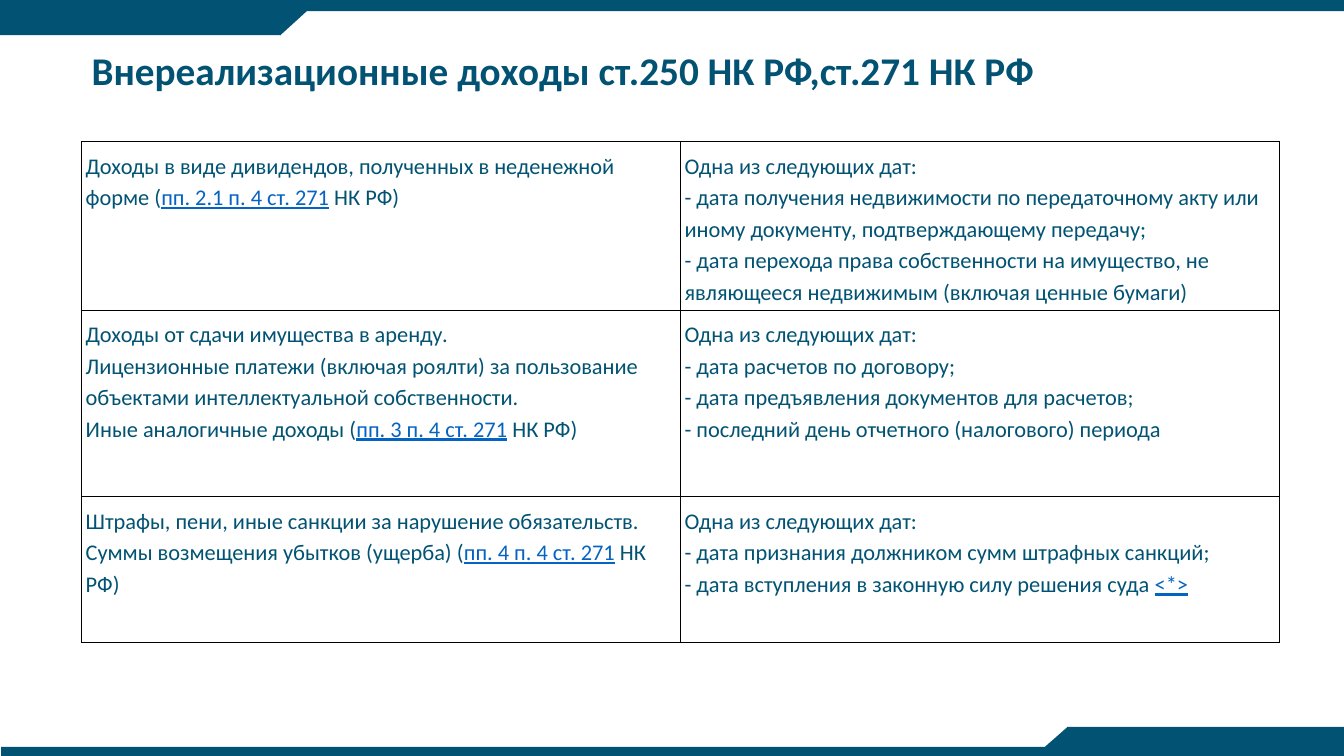
import pptx
import pptx.dml.color
import pptx.enum.shapes
import pptx.enum.text
import pptx.oxml
import pptx.oxml.ns
import pptx.util

TEAL = pptx.dml.color.RGBColor(0x02, 0x53, 0x73)
LINK_BLUE = pptx.dml.color.RGBColor(0x05, 0x63, 0xC1)
BORDER = pptx.dml.color.RGBColor(0, 0, 0)
SHAPES = pptx.enum.shapes.MSO_SHAPE
MIDDLE = pptx.enum.text.MSO_ANCHOR.MIDDLE

# Each cell is a list of paragraphs; text between bars is shown as a link.
DATES = "Одна из следующих дат:"
INCOME_ROWS = [
    (["Доходы в виде дивидендов, полученных в неденежной форме (|пп. 2.1 п. 4 ст. 271| НК РФ)"],
     [DATES,
      "- дата получения недвижимости по передаточному акту или иному документу, "
      "подтверждающему передачу;",
      "- дата перехода права собственности на имущество, не являющееся недвижимым "
      "(включая ценные бумаги)"]),
    (["Доходы от сдачи имущества в аренду.",
      "Лицензионные платежи (включая роялти) за пользование объектами "
      "интеллектуальной собственности.",
      "Иные аналогичные доходы (|пп. 3 п. 4 ст. 271| НК РФ)"],
     [DATES,
      "- дата расчетов по договору;",
      "- дата предъявления документов для расчетов;",
      "- последний день отчетного (налогового) периода"]),
    (["Штрафы, пени, иные санкции за нарушение обязательств.",
      "Суммы возмещения убытков (ущерба) (|пп. 4 п. 4 ст. 271| НК РФ)"],
     [DATES,
      "- дата признания должником сумм штрафных санкций;",
      "- дата вступления в законную силу решения суда |<*>|"]),
]


class SlidePainter:
    """Draws on one page; all lengths are percentages of the page's size."""

    font_name = "Calibri"

    def __init__(self, deck):
        self.deck = deck
        self.page = deck.slides.add_slide(deck.slide_layouts[6])

    def across(self, share):
        return int(self.deck.slide_width * share / 100)

    def down(self, share):
        return int(self.deck.slide_height * share / 100)

    def area(self, left, top, width, height):
        return self.across(left), self.down(top), self.across(width), self.down(height)

    def block(self, kind, left, top, width, height, rotation=0):
        shape = self.page.shapes.add_shape(kind, *self.area(left, top, width, height))
        shape.shadow.inherit = False
        shape.fill.solid()
        shape.fill.fore_color.rgb = TEAL
        shape.line.fill.background()
        shape.rotation = rotation

    def fill_paragraph(self, para, text, size, spacing, bold=False):
        """Fill a paragraph, styling every part between bars as a link."""
        para.line_spacing = spacing
        para.font.name = self.font_name
        para.font.size = pptx.util.Pt(size)
        para.font.bold = bold
        para.font.color.rgb = TEAL
        for index, part in enumerate(text.split("|")):
            if not part:
                continue
            span = para.add_run()
            span.text = part
            if index % 2:
                span.font.color.rgb = LINK_BLUE
                span.font.underline = True

    def title(self, text, left, top, width, height):
        box = self.page.shapes.add_textbox(*self.area(left, top, width, height))
        box.text_frame.word_wrap = True
        box.text_frame.vertical_anchor = MIDDLE
        self.fill_paragraph(box.text_frame.paragraphs[0], text, 28, 0.9, bold=True)

    def border(self, cell):
        properties = cell._tc.get_or_add_tcPr()
        for side in ("lnL", "lnR", "lnT", "lnB"):
            properties.append(pptx.oxml.parse_xml(
                f'<a:{side} {pptx.oxml.ns.nsdecls("a")} w="{pptx.util.Pt(1)}">'
                f'<a:solidFill><a:srgbClr val="{BORDER}"/></a:solidFill></a:{side}>'))

    def fill_cell(self, cell, texts):
        self.border(cell)
        cell.fill.background()
        cell.margin_left = cell.margin_right = pptx.util.Inches(0.04)
        cell.margin_top = cell.margin_bottom = pptx.util.Inches(0.07)
        for index, text in enumerate(texts):
            frame = cell.text_frame
            para = frame.add_paragraph() if index else frame.paragraphs[0]
            self.fill_paragraph(para, text, 16, 1.15)

    def table(self, rows, left, top, width, row_heights):
        columns = len(rows[0])
        table = self.page.shapes.add_table(
            len(rows), columns, *self.area(left, top, width, sum(row_heights))).table
        table.first_row = table.horz_banding = False
        for column in table.columns:
            column.width = self.across(width / columns)
        for row, height, cells in zip(table.rows, row_heights, rows):
            row.height = self.down(height)
            for cell, texts in zip(row.cells, cells):
                self.fill_cell(cell, texts)


def main():
    deck = pptx.Presentation()
    deck.slide_width = pptx.util.Inches(13.33)
    deck.slide_height = pptx.util.Inches(7.5)
    painter = SlidePainter(deck)

    painter.block(SHAPES.RECTANGLE, 0, 0, 100, 1.47)
    painter.block(SHAPES.RECTANGLE, 0.08, 98.8, 99.92, 1.2)
    painter.block(SHAPES.RECTANGLE, 0, 0.67, 20.86, 4)
    painter.block(SHAPES.FLOWCHART_MERGE, 18.38, 0.67, 4.95, 4)
    painter.block(SHAPES.RECTANGLE, 79.44, 96.13, 20.56, 3.87)
    painter.block(SHAPES.FLOWCHART_MERGE, 76.97, 96.13, 4.95, 3.87, rotation=180)

    painter.title("Внереализационные доходы ст.250 НК РФ,ст.271 НК РФ", 6.08, 0, 86.27, 19.33)
    painter.table(INCOME_ROWS, 6.08, 18.75, 89.12, [20.8, 24.67, 19.33])
    deck.save("out.pptx")


if __name__ == "__main__":
    main()
